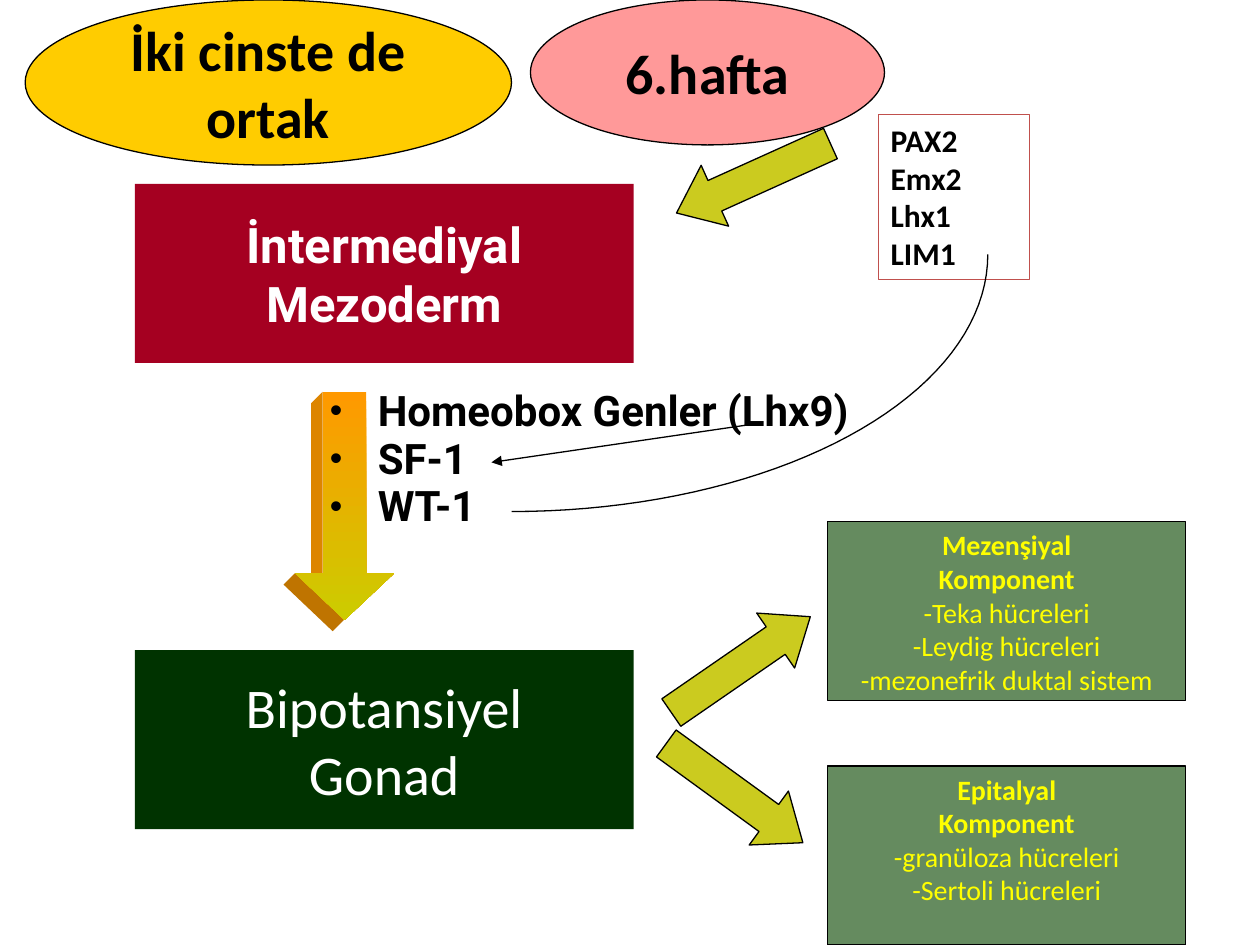
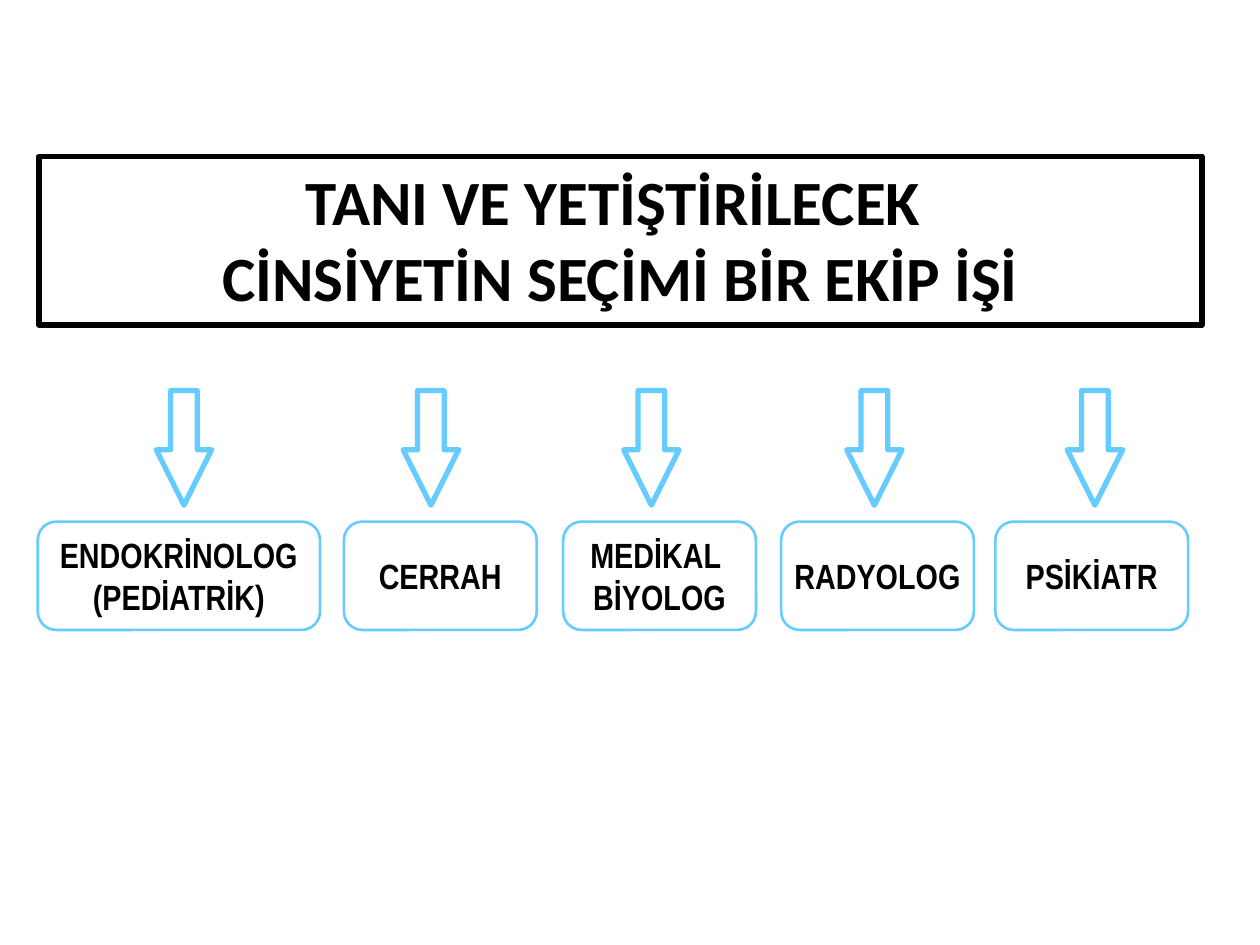
import math

from lxml import etree
from pptx import Presentation
from pptx.dml.color import RGBColor
from pptx.enum.shapes import MSO_CONNECTOR, MSO_SHAPE
from pptx.enum.text import MSO_ANCHOR, PP_ALIGN
from pptx.oxml.ns import qn
from pptx.util import Inches, Pt

RECTANGLE, ELLIPSE = MSO_SHAPE.RECTANGLE, MSO_SHAPE.OVAL
ROUNDED = MSO_SHAPE.ROUNDED_RECTANGLE
RIGHT_ARROW, DOWN_ARROW = MSO_SHAPE.RIGHT_ARROW, MSO_SHAPE.DOWN_ARROW
TOP, MIDDLE = MSO_ANCHOR.TOP, MSO_ANCHOR.MIDDLE
LEFT, CENTER = PP_ALIGN.LEFT, PP_ALIGN.CENTER

COLORS = {
    "black": "000000", "white": "FFFFFF", "crimson": "A50021",
    "forest": "003300", "sage": "658B5F", "yellow": "FFFF00",
    "olive": "CBCB1F", "pink": "FF9999", "gold": "FFCC00",
    "brick": "C0504D", "sky": "66CCFF", "orange": "FF9900",
    "mustard": "CCCC00", "shaft side": "DD8500", "head side": "BF7400",
}

# Slide 1 content: tissues, genes, components and the arrows between them
STAGES = [  # top, text, fill, font, size, bold
    (1.46, "İntermediyal Mezoderm", "crimson", "Roboto", 28, True),
    (5.16, "Bipotansiyel\vGonad", "forest", "Calibri", 32, False),
]
GENES = ["Homeobox Genler (Lhx9)", "SF-1", "WT-1"]
EARLY_GENES = ["PAX2", "Emx2", "Lhx1", "LIM1"]
COMPONENTS = [  # top, heading lines, cell lines
    (4.14, ["Mezenşiyal", "Komponent"],
     ["-Teka hücreleri", "-Leydig hücreleri", "-mezonefrik duktal sistem"]),
    (6.08, ["Epitalyal", "Komponent"],
     ["-granüloza hücreleri", "-Sertoli hücreleri"]),
]
BLOCK_ARROWS = [(5.21, 5.01, 325.4), (5.16, 6.03, 36), (5.31, 1.15, 155.7)]
BUBBLES = [  # box, lines, fill
    ((4.21, 0, 2.81, 1.15), ["6.hafta"], "pink"),
    ((0.2, 0, 3.86, 1.31), ["İki cinste de", "ortak"], "gold"),
]
ARROW_SIDES = [  # outline of the depth of the large arrow, colour
    ([(2.56, 3.11), (2.47, 3.2), (2.47, 4.55), (2.56, 4.55)], "shaft side"),
    ([(2.34, 4.55), (2.25, 4.64), (2.64, 5.01), (2.73, 4.92)], "head side"),
]
CURVE_CENTER, CURVE_RADII, CURVE_STEPS = (4.06, 2.02), (3.78, 2.04), 40

# Slide 2 content: the team
TEAM_TITLE = ["TANI VE YETİŞTİRİLECEK ", "CİNSİYETİN SEÇİMİ BİR EKİP İŞİ"]
TEAM = [  # box left, box width, arrow left, lines
    (0.3, 2.24, 1.24, ["ENDOKRİNOLOG", "(PEDİATRİK)"]),
    (2.73, 1.53, 3.2, ["CERRAH"]),
    (4.47, 1.53, 4.95, ["MEDİKAL ", "BİYOLOG"]),
    (6.2, 1.53, 6.72, ["RADYOLOG"]),
    (7.9, 1.53, 8.47, ["PSİKİATR"]),
]


def rgb(name):
    return RGBColor.from_string(COLORS[name])


def paint(shape, fill=None, line=None, width=0.75):
    shape.shadow.inherit = False
    if fill:
        shape.fill.solid()
        shape.fill.fore_color.rgb = rgb(fill)
    else:
        shape.fill.background()
    if line:
        shape.line.color.rgb = rgb(line)
        shape.line.width = Pt(width)
    else:
        shape.line.fill.background()


def add_block(slide, kind, box, fill=None, line=None, width=0.75,
              adjustments=(), rotation=0):
    shape = slide.shapes.add_shape(kind, *map(Inches, box))
    paint(shape, fill, line, width)
    for index, value in enumerate(adjustments):
        shape.adjustments[index] = value
    shape.rotation = rotation
    return shape


def write(shape, lines, font, size, color="black", bold=True, align=CENTER,
          anchor=MIDDLE, wrap=False):
    frame = shape.text_frame
    frame.word_wrap = wrap
    frame.vertical_anchor = anchor
    for index, line in enumerate(lines):
        paragraph = frame.paragraphs[0] if index == 0 else frame.add_paragraph()
        paragraph.text = line
        paragraph.alignment = align
        paragraph.font.name = font
        paragraph.font.size = Pt(size)
        paragraph.font.bold = bold
        paragraph.font.color.rgb = rgb(color)
    return frame.paragraphs


def add_bullet(paragraph, indent):
    properties = paragraph._p.get_or_add_pPr()
    properties.set("marL", str(Inches(indent)))
    properties.set("indent", str(-Inches(indent)))
    etree.SubElement(properties, qn("a:buSzPct")).set("val", "85000")
    etree.SubElement(properties, qn("a:buFont")).set("typeface", "Arial")
    etree.SubElement(properties, qn("a:buChar")).set("char", "•")


def add_outline(slide, points, closed):
    corners = [(Inches(x), Inches(y)) for x, y in points]
    builder = slide.shapes.build_freeform(*corners[0])
    builder.add_line_segments(corners[1:], close=closed)
    return builder.convert_to_shape()


def add_arrow_line(slide, start, end):
    connector = slide.shapes.add_connector(
        MSO_CONNECTOR.STRAIGHT, *map(Inches, start + end))
    connector.line.color.rgb = rgb("black")
    connector.line.width = Pt(0.75)
    etree.SubElement(connector.line._get_or_add_ln(),
                     qn("a:tailEnd")).set("type", "triangle")
    etree.SubElement(connector._element.spPr, qn("a:effectLst"))


def build_gonad_slide(slide):
    # Stages and the large arrow between them
    for top, text, fill, font, size, bold in STAGES:
        stage = add_block(slide, RECTANGLE, (1.07, top, 3.96, 1.42), fill)
        write(stage, [text], font, size, "white", bold, wrap=True)
    for points, color in ARROW_SIDES:
        paint(add_outline(slide, points, True), color)
    arrow = add_block(slide, DOWN_ARROW, (2.34, 3.11, 0.79, 1.81),
                      adjustments=(0.43, 0.47))
    arrow.fill.gradient()
    arrow.fill.gradient_angle = 270
    for stop, color, position in zip(arrow.fill.gradient_stops,
                                     ("orange", "mustard"), (0, 1)):
        stop.color.rgb = rgb(color)
        stop.position = position

    # Genes beside the arrow
    gene_list = slide.shapes.add_textbox(*map(Inches, (2.52, 3.03, 7.23, 1.57)))
    for paragraph in write(gene_list, GENES, "Roboto", 24, align=LEFT,
                           anchor=TOP, wrap=True):
        paragraph.line_spacing = 0.95
        add_bullet(paragraph, 0.38)

    # Components of the gonad
    for top, heading, cells in COMPONENTS:
        component = add_block(slide, RECTANGLE, (6.57, top, 2.84, 1.42),
                              "sage", "black")
        paragraphs = write(component, heading + cells, "Calibri", 16, "yellow",
                           anchor=TOP)
        for paragraph in paragraphs[len(heading):]:
            paragraph.font.bold = False

    # Bubbles, early genes and block arrows
    for box, lines, fill in BUBBLES:
        bubble = add_block(slide, ELLIPSE, box, fill, "black")
        write(bubble, lines, "Calibri", 32)
    early = add_block(slide, RECTANGLE, (6.97, 0.91, 1.2, 1.31), line="brick")
    write(early, EARLY_GENES, "Calibri", 18, align=LEFT, anchor=TOP, wrap=True)
    for left, top, rotation in BLOCK_ARROWS:
        add_block(slide, RIGHT_ARROW, (left, top, 1.34, 0.53), "olive", "black",
                  adjustments=(0.5, 0.63), rotation=rotation)

    # Thin links: a straight arrow and a quarter ellipse
    add_arrow_line(slide, (6.02, 3.36), (3.9, 3.67))
    angles = [math.pi / 2 * step / CURVE_STEPS for step in range(CURVE_STEPS + 1)]
    curve = [(CURVE_CENTER[0] + CURVE_RADII[0] * math.sin(angle),
              CURVE_CENTER[1] + CURVE_RADII[1] * math.cos(angle))
             for angle in angles]
    paint(add_outline(slide, curve, False), line="black")


def build_team_slide(slide):
    title = add_block(slide, RECTANGLE, (0.31, 1.24, 9.23, 1.34),
                      line="black", width=3)
    write(title, TEAM_TITLE, "Calibri", 36, anchor=TOP, wrap=True)
    for left, width, arrow_left, lines in TEAM:
        member = add_block(slide, ROUNDED, (left, 4.14, width, 0.86),
                           line="sky", width=1.5, adjustments=(0.17,))
        write(member, lines, "Arial Narrow", 20)
        add_block(slide, DOWN_ARROW, (arrow_left, 3.1, 0.44, 0.91),
                  line="sky", width=3, adjustments=(0.48, 1))


def main():
    presentation = Presentation()
    presentation.slide_width = Inches(10)
    presentation.slide_height = Inches(7.5)
    for build in (build_gonad_slide, build_team_slide):
        build(presentation.slides.add_slide(presentation.slide_layouts[6]))
    presentation.save("out.pptx")


if __name__ == "__main__":
    main()
